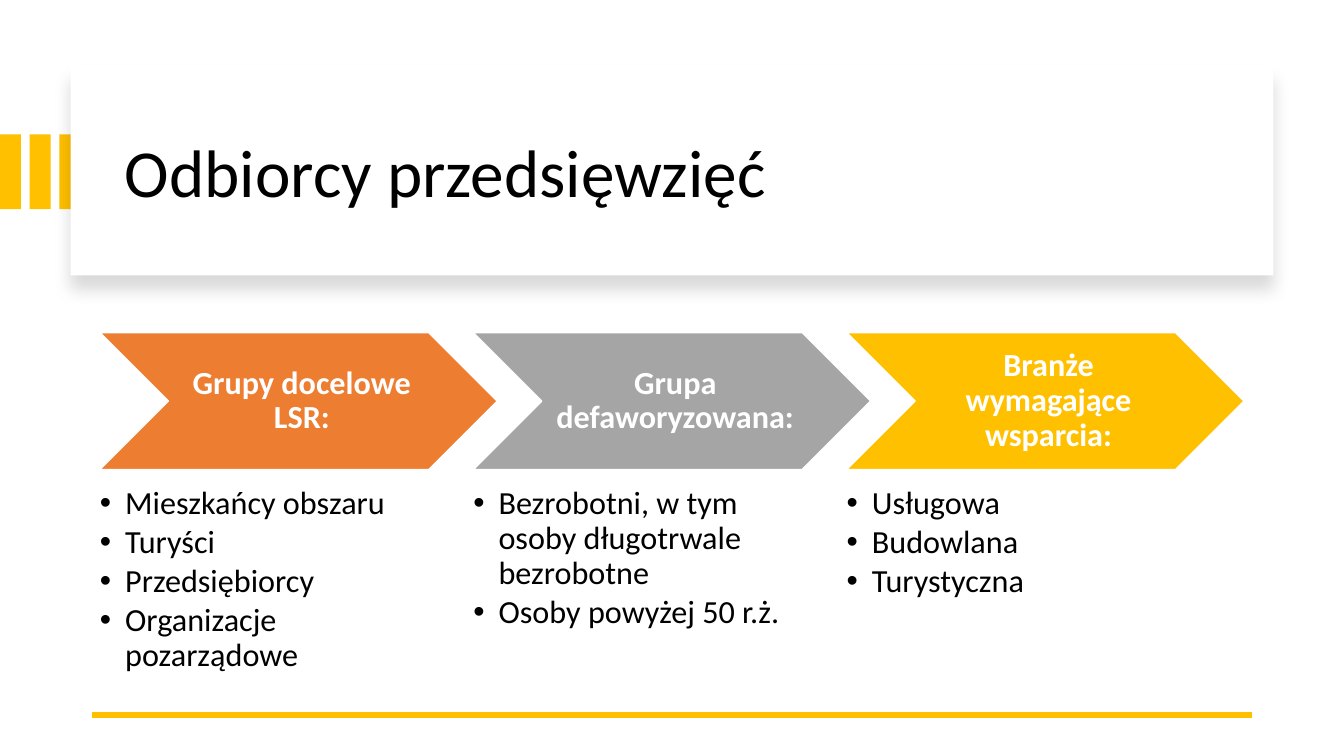
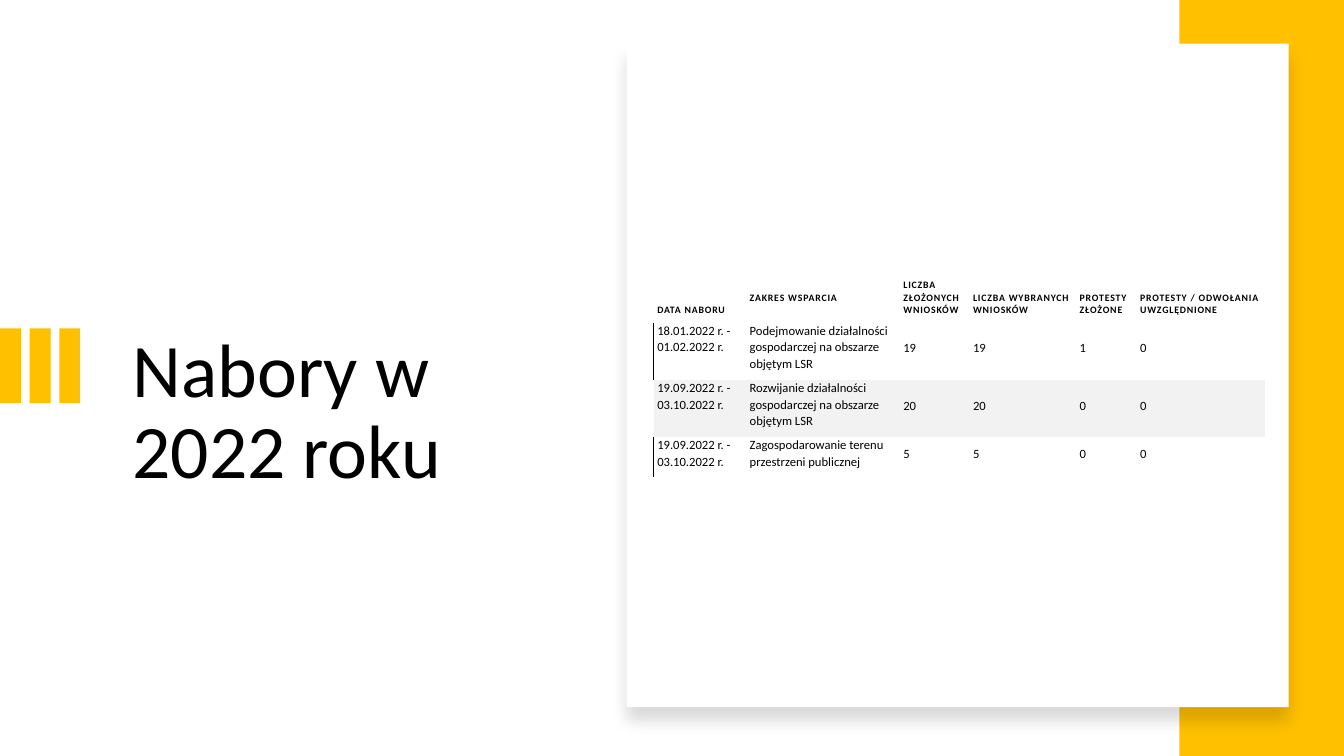
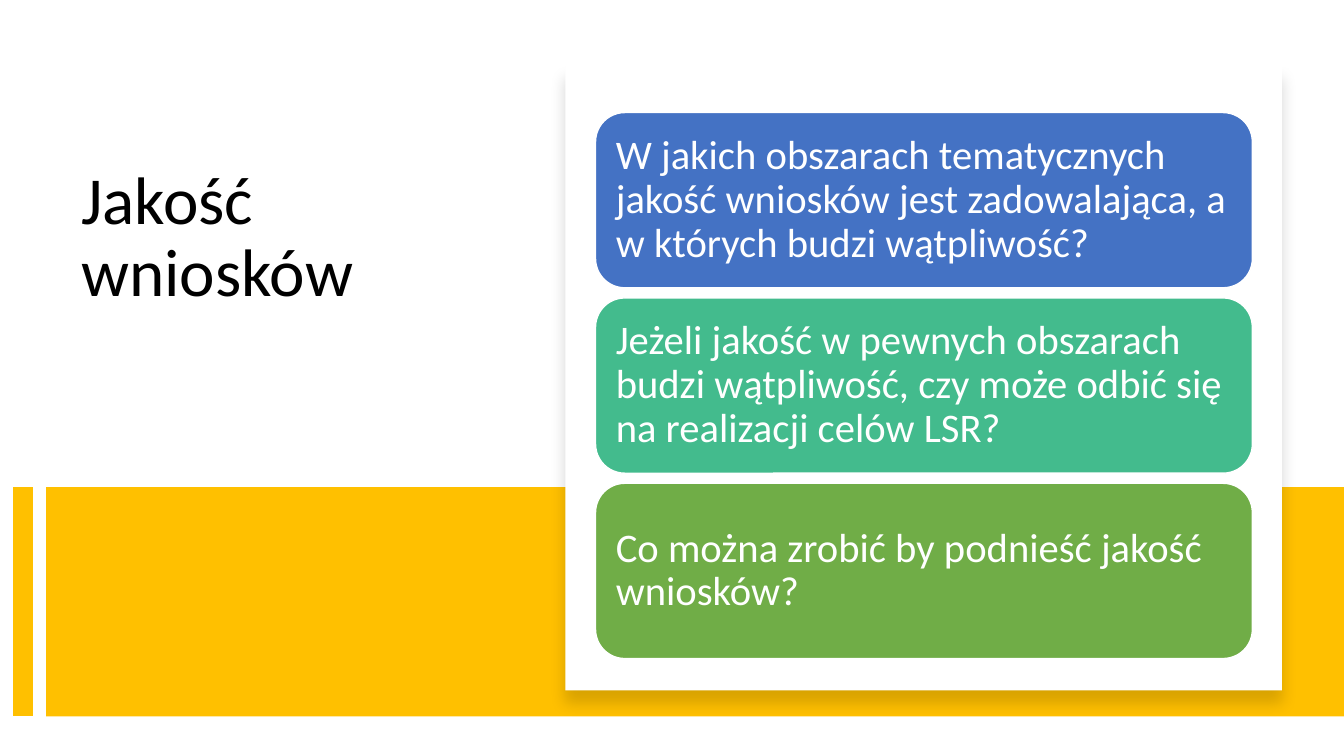
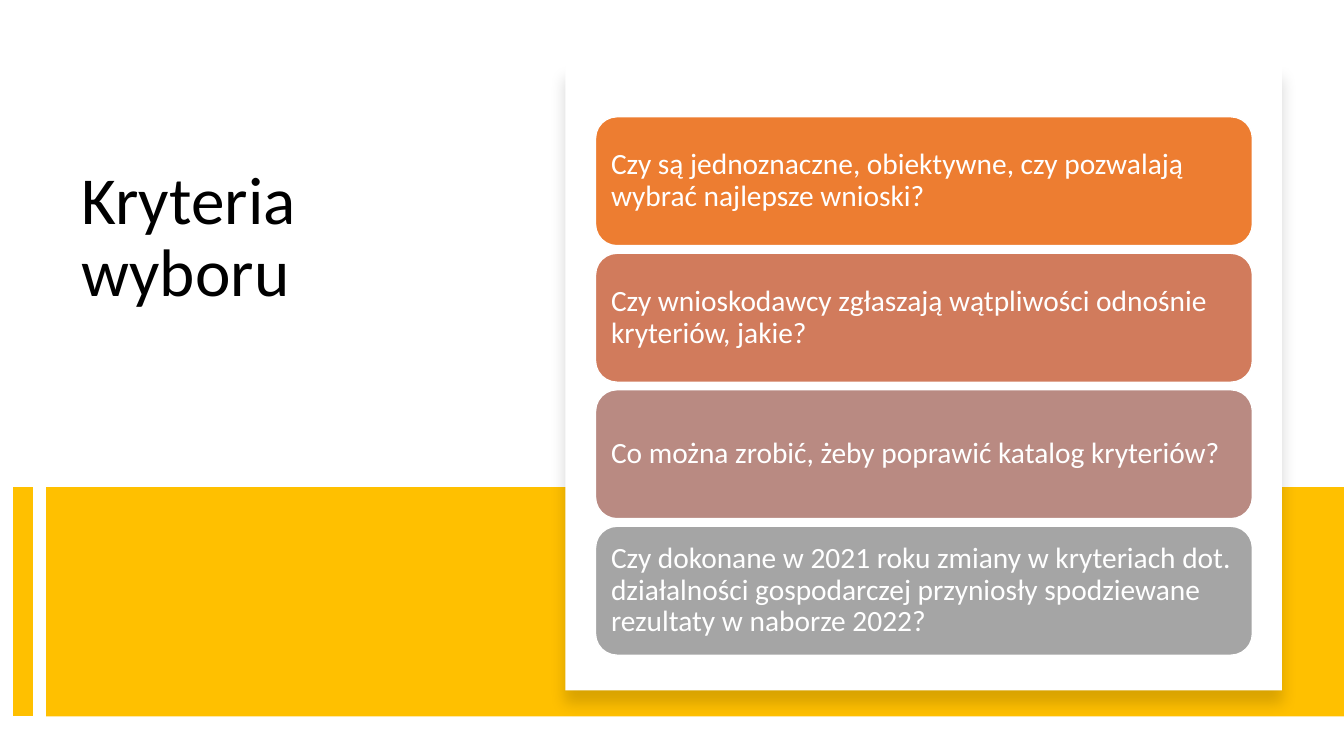
from dataclasses import dataclass

from lxml.etree import SubElement
from pptx import Presentation
from pptx.dml.color import RGBColor
from pptx.enum.shapes import MSO_CONNECTOR, MSO_SHAPE
from pptx.enum.text import MSO_ANCHOR, PP_ALIGN
from pptx.oxml import parse_xml
from pptx.oxml.ns import nsdecls, qn
from pptx.util import Inches, Pt

UNIT = 13.333 / 160  # the slide is a grid of 160 columns by 90 rows


@dataclass(frozen=True)
class Theme:
    font: str = "Calibri"
    accent: str = "FFC000"
    orange: str = "ED7D31"
    gray: str = "A5A5A5"
    blue: str = "4472C4"
    teal: str = "43BB8D"
    green: str = "70AD47"
    terracotta: str = "D17B5C"
    rose: str = "B98A82"
    white: str = "FFFFFF"
    black: str = "000000"
    row_band: str = "F2F2F2"
    title: int = 48
    large_title: int = 54
    body: int = 23
    question: int = 29
    small_question: int = 21
    table_head: int = 7
    table_body: int = 9


THEME = Theme()


def grid(units):
    return Inches(units * UNIT)


@dataclass(frozen=True)
class Box:
    """A rectangle measured in grid columns and rows."""
    left: float
    top: float
    width: float
    height: float

    def place(self):
        return [grid(side) for side in (self.left, self.top, self.width, self.height)]

    def columns(self, count, gap):
        width = (self.width - gap * (count - 1)) / count
        return [Box(self.left + index * (width + gap), self.top, width, self.height)
                for index in range(count)]

    def rows(self, count, gap):
        height = (self.height - gap * (count - 1)) / count
        return [Box(self.left, self.top + index * (height + gap), self.width, height)
                for index in range(count)]


def color(value):
    return RGBColor.from_string(value)


def style_paragraph(paragraph, size, ink, bold=False, align=PP_ALIGN.LEFT, spacing=0.9):
    paragraph.alignment = align
    paragraph.line_spacing = spacing
    for run in paragraph.runs:
        run.font.name = THEME.font
        run.font.size = Pt(size)
        run.font.bold = bold
        run.font.color.rgb = color(ink)


def set_margins(target, left, top, right, bottom):
    target.margin_left, target.margin_top = grid(left), grid(top)
    target.margin_right, target.margin_bottom = grid(right), grid(bottom)


def add_panel(slide, box, fill, kind=MSO_SHAPE.RECTANGLE, outline=None):
    shape = slide.shapes.add_shape(kind, *box.place())
    shape.shadow.inherit = False
    shape.fill.solid()
    shape.fill.fore_color.rgb = color(fill)
    if outline:
        shape.line.color.rgb = color(outline)
        shape.line.width = Pt(1)
    else:
        shape.line.fill.background()
    return shape


def add_card(slide, box):
    """White panel with a soft shadow below it."""
    card = add_panel(slide, box, THEME.white)
    effects = card._element.spPr.find(qn("a:effectLst"))
    shadow = SubElement(effects, qn("a:outerShdw"), blurRad=str(Pt(11)), dist=str(Pt(10)),
                        dir="5400000", algn="t", rotWithShape="0")
    ink = SubElement(shadow, qn("a:srgbClr"), val=THEME.black)
    SubElement(ink, qn("a:alpha"), val="15000")


def add_line(slide, start, end, width):
    line = slide.shapes.add_connector(
        MSO_CONNECTOR.STRAIGHT, *[grid(value) for value in (*start, *end)])
    line.line.color.rgb = color(THEME.accent)
    line.line.width = Pt(width)
    SubElement(line._element.spPr, qn("a:effectLst"))


def add_text_box(slide, box, lines):
    frame = slide.shapes.add_textbox(*box.place()).text_frame
    frame.word_wrap = True
    frame.text = "\n".join(lines)
    return frame


def add_title(slide, box, text, size=THEME.title, anchor=MSO_ANCHOR.TOP):
    frame = add_text_box(slide, box, [text])
    frame.vertical_anchor = anchor
    style_paragraph(frame.paragraphs[0], size, THEME.black)


def add_stripes(slide, top):
    for stripe in Box(0, top, 9.56, 8.9).columns(3, 1.03):
        add_panel(slide, stripe, THEME.accent)


def add_label(shape, text, size, margins, bold=False, align=PP_ALIGN.LEFT):
    frame = shape.text_frame
    frame.word_wrap = True
    frame.vertical_anchor = MSO_ANCHOR.MIDDLE
    set_margins(frame, *margins)
    frame.text = text
    style_paragraph(frame.paragraphs[0], size, THEME.white, bold, align)


def add_bullets(slide, box, items):
    frame = add_text_box(slide, box, items)
    set_margins(frame, 0, 0, 0, 0)
    for paragraph in frame.paragraphs:
        style_paragraph(paragraph, THEME.body, THEME.black)
        paragraph.space_after = Pt(3)
        properties = paragraph._p.get_or_add_pPr()
        properties.set("marL", str(Inches(0.25)))
        properties.set("indent", str(-Inches(0.25)))
        SubElement(properties, qn("a:buFont"), typeface="Arial")
        SubElement(properties, qn("a:buChar"), char="•")


def add_audience(slide, box, heading, fill, items):
    """Chevron heading with its bullet list below."""
    chevron = add_panel(slide, Box(box.left, box.top, box.width, 16.3), fill,
                        MSO_SHAPE.CHEVRON, THEME.white)
    add_label(chevron, heading, THEME.body, (1.2, 0.4, 0.4, 0.4), True, PP_ALIGN.CENTER)
    add_bullets(slide, Box(box.left, box.top + 18.4, box.width * 0.8, box.height - 18.4), items)


def build_audience_slide(slide, title, audiences):
    add_stripes(slide, 16)
    add_card(slide, Box(8.4, 8, 143.2, 24.8))
    add_title(slide, Box(13.7, 10.7, 133.6, 20.4), title, anchor=MSO_ANCHOR.MIDDLE)
    add_line(slide, (149.1, 85.1), (11, 85.1), 4.5)
    columns = Box(11.9, 39.6, 136.2, 42.2).columns(len(audiences), -2.85)
    for column, audience in zip(columns, audiences):
        add_audience(slide, column, *audience)


def style_cell(cell, text, is_head, is_number, fill):
    cell.text_frame.text = text
    set_margins(cell, 0.45, 0.7 if is_head else 0, 0.45, 0.7)
    if is_head:
        cell.vertical_anchor = MSO_ANCHOR.BOTTOM
    elif is_number:
        cell.vertical_anchor = MSO_ANCHOR.MIDDLE
    paragraph = cell.text_frame.paragraphs[0]
    style_paragraph(paragraph, THEME.table_head if is_head else THEME.table_body,
                    THEME.black, is_head, spacing=1.07)
    paragraph.space_after = Pt(8)
    if is_head:
        paragraph.runs[0]._r.get_or_add_rPr().set("spc", "60")
    if fill:
        cell.fill.solid()
        cell.fill.fore_color.rgb = color(fill)
    else:
        cell.fill.background()


def add_left_border(cell):
    cell._tc.get_or_add_tcPr().insert(0, parse_xml(
        f'<a:lnL {nsdecls("a")} w="{Pt(1)}"><a:solidFill>'
        f'<a:srgbClr val="{THEME.black}"/></a:solidFill></a:lnL>'))


def add_calls_table(slide, box, records, widths, heights):
    table = slide.shapes.add_table(len(records), len(widths), *box.place()).table
    table.horz_banding = False
    table.first_row = False
    style = table._tbl.tblPr.find(qn("a:tableStyleId"))
    style.text = "{2D5ABB26-0587-4C30-8999-92F81FD0307C}"
    for column, width in zip(table.columns, widths):
        column.width = grid(width)
    for row, height in zip(table.rows, heights):
        row.height = grid(height)
    for row_index, record in enumerate(records):
        is_banded = row_index > 0 and row_index % 2 == 0
        for column_index, text in enumerate(record):
            style_cell(table.cell(row_index, column_index), text, row_index == 0,
                       column_index > 1, THEME.row_band if is_banded else None)
        if row_index % 2:
            add_left_border(table.cell(row_index, 0))
    # the second heading stands one line higher than its neighbours
    table.cell(0, 1).margin_bottom = grid(2.2)


def build_calls_slide(slide, title, records):
    add_title(slide, Box(14.6, 38.9, 52.9, 31.3), title, THEME.large_title)
    add_stripes(slide, 39.1)
    add_panel(slide, Box(140.4, 0, 19.6, 90), THEME.accent)
    add_card(slide, Box(74.6, 5.2, 78.8, 79))
    add_calls_table(slide, Box(77.8, 32.4, 72.8, 24.4), records,
                    (11, 18.3, 8.3, 12.7, 7.2, 15.3), (6, 6.8, 6.8, 4.8))


def build_question_slide(slide, title, questions, stack, gap, size, margin):
    add_title(slide, Box(8.5, 19.2, 49.8, 35.3), title)
    add_panel(slide, Box(5.5, 58, 154.5, 27.3), THEME.accent)
    add_line(slide, (2.75, 58), (2.75, 85.3), 14)
    add_card(slide, Box(67.3, 7.7, 85.3, 74.5))
    for row, (text, fill) in zip(stack.rows(len(questions), gap), questions):
        panel = add_panel(slide, row, fill, MSO_SHAPE.ROUNDED_RECTANGLE, THEME.white)
        add_label(panel, text, size, (margin,) * 4)


AUDIENCES = [
    ("Grupy docelowe LSR:", THEME.orange,
     ["Mieszkańcy obszaru", "Turyści", "Przedsiębiorcy", "Organizacje pozarządowe"]),
    ("Grupa defaworyzowana:", THEME.gray,
     ["Bezrobotni, w tym osoby długotrwale bezrobotne", "Osoby powyżej 50 r.ż."]),
    ("Branże wymagające wsparcia:", THEME.accent,
     ["Usługowa", "Budowlana", "Turystyczna"]),
]

CALLS = [
    ("DATA NABORU", "ZAKRES WSPARCIA", "LICZBA ZŁOŻONYCH WNIOSKÓW",
     "LICZBA WYBRANYCH WNIOSKÓW", "PROTESTY ZŁOŻONE", "PROTESTY / ODWOŁANIA UWZGLĘDNIONE"),
    ("18.01.2022 r. - 01.02.2022 r.",
     "Podejmowanie działalności gospodarczej na obszarze objętym LSR", "19", "19", "1", "0"),
    ("19.09.2022 r. - 03.10.2022 r.",
     "Rozwijanie działalności gospodarczej na obszarze objętym LSR", "20", "20", "0", "0"),
    ("19.09.2022 r. - 03.10.2022 r.",
     "Zagospodarowanie terenu przestrzeni publicznej", "5", "5", "0", "0"),
]

QUALITY_QUESTIONS = [
    ("W jakich obszarach tematycznych jakość wniosków jest zadowalająca, "
     "a w których budzi wątpliwość?", THEME.blue),
    ("Jeżeli jakość w pewnych obszarach budzi wątpliwość, "
     "czy może odbić się na realizacji celów LSR?", THEME.teal),
    ("Co można zrobić by podnieść jakość wniosków?", THEME.green),
]

CRITERIA_QUESTIONS = [
    ("Czy są jednoznaczne, obiektywne, czy pozwalają wybrać najlepsze wnioski?", THEME.orange),
    ("Czy wnioskodawcy zgłaszają wątpliwości odnośnie kryteriów, jakie?", THEME.terracotta),
    ("Co można zrobić, żeby poprawić katalog kryteriów?", THEME.rose),
    ("Czy dokonane w 2021 roku zmiany w kryteriach dot. działalności gospodarczej "
     "przyniosły spodziewane rezultaty w naborze 2022?", THEME.gray),
]


def main():
    presentation = Presentation()
    presentation.slide_width, presentation.slide_height = grid(160), grid(90)
    blank = presentation.slide_layouts[6]

    def new_slide():
        return presentation.slides.add_slide(blank)

    build_audience_slide(new_slide(), "Odbiorcy przedsięwzięć", AUDIENCES)
    build_calls_slide(new_slide(), "Nabory w 2022 roku", CALLS)
    build_question_slide(new_slide(), "Jakość wniosków", QUALITY_QUESTIONS,
                         Box(70.9, 13.4, 78.2, 65), 1.2, THEME.question, 1.4)
    build_question_slide(new_slide(), "Kryteria wyboru", CRITERIA_QUESTIONS,
                         Box(70.9, 13.9, 78.2, 64.1), 0.9, THEME.small_question, 1.1)
    presentation.save("out.pptx")


if __name__ == "__main__":
    main()
